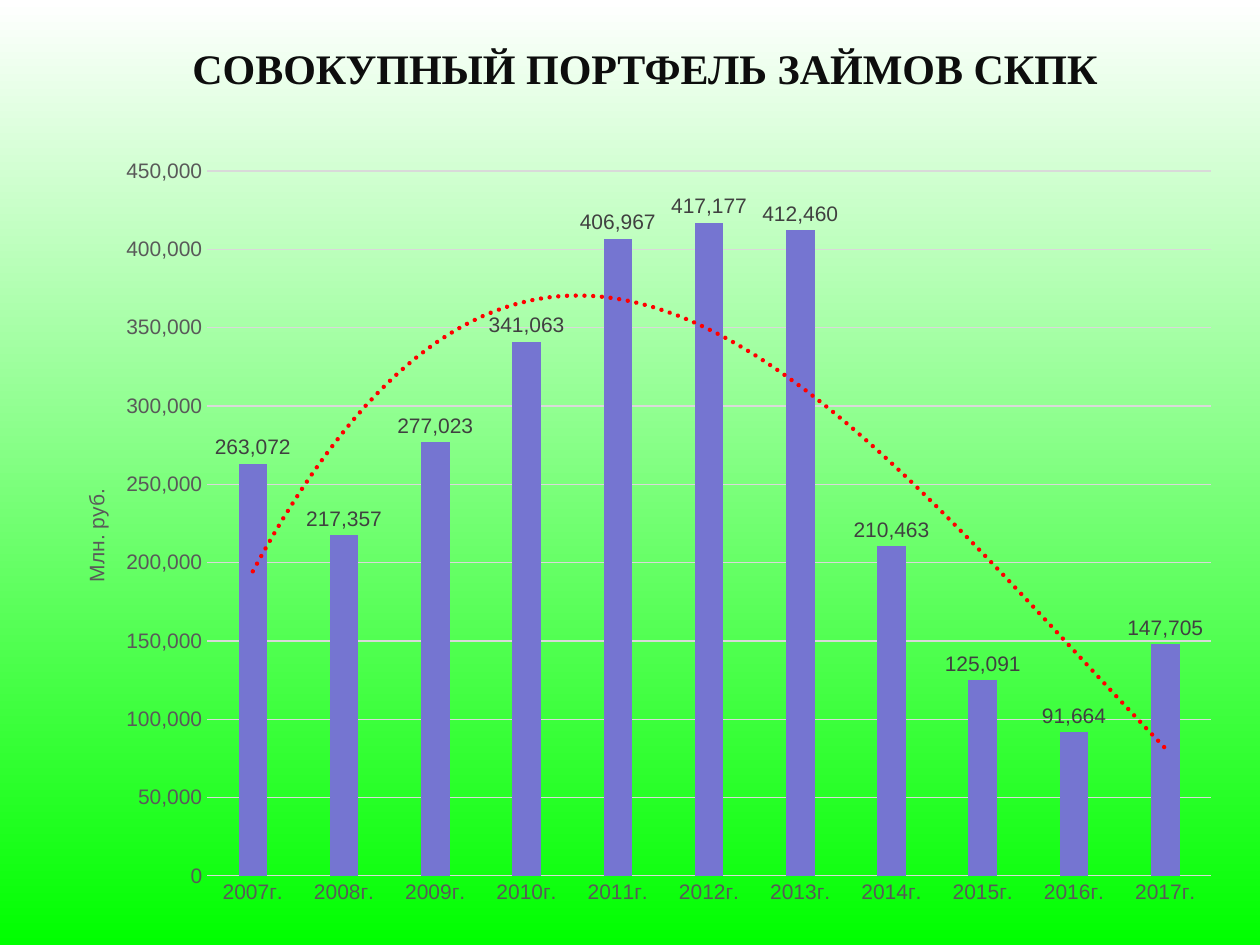
from lxml import etree
from pptx import Presentation
from pptx.chart.data import CategoryChartData
from pptx.dml.color import RGBColor
from pptx.enum import chart as kinds, text
from pptx.oxml import parse_xml
from pptx.oxml.ns import nsdecls, qn
from pptx.util import Inches, Pt

WHITE = RGBColor(0xFF, 0xFF, 0xFF)
GREEN = RGBColor(0x00, 0xFF, 0x00)
TITLE_INK = RGBColor(0x0D, 0x0D, 0x0D)
AXIS_INK = RGBColor(0x59, 0x59, 0x59)
LABEL_INK = RGBColor(0x40, 0x40, 0x40)
GRID = RGBColor(0xD9, 0xD9, 0xD9)
BAR = RGBColor(0x75, 0x75, 0xD1)
TREND = RGBColor(0xFF, 0x00, 0x00)

FIRST_YEAR = 2007
LOANS = [263072, 217357, 277023, 341063, 406967, 417177,
         412460, 210463, 125091, 91664, 147705]
NUMBER_FORMAT = "#,##0"


def paint_background(page):
    fill = page.background.fill
    fill.gradient()
    fill.gradient_angle = 270  # white at the top, green at the bottom
    for stop, color in zip(fill.gradient_stops, (WHITE, GREEN)):
        stop.color.rgb = color


def add_title(page, left, top, width, height):
    box = page.shapes.title
    box.left, box.top, box.width, box.height = left, top, width, height
    frame = box.text_frame
    frame.word_wrap = True
    frame.auto_size = text.MSO_AUTO_SIZE.NONE
    frame.vertical_anchor = text.MSO_ANCHOR.MIDDLE
    frame.margin_bottom = Inches(0.41)  # lifts the line above the middle
    para = frame.paragraphs[0]
    para.text = "СОВОКУПНЫЙ ПОРТФЕЛЬ ЗАЙМОВ СКПК"
    para.alignment = text.PP_ALIGN.CENTER
    style_font(para.font, 24, TITLE_INK, "Times New Roman")
    para.font.bold = True


def style_font(font, size, color, name="Arial"):
    font.size, font.name = Pt(size), name
    font.color.rgb = color


def style_line(line, color):
    line.color.rgb = color
    line.width = Pt(0.75)


def set_layout(parent, index, inner=False, **fractions):
    """Place a chart part by fractions of the chart's size."""
    for old in parent.findall(qn("c:layout")):
        parent.remove(old)
    layout = parse_xml(f"<c:layout {nsdecls('c')}><c:manualLayout/></c:layout>")
    settings = {"layoutTarget": "inner"} if inner else {}
    settings |= {"xMode": "edge", "yMode": "edge"} | fractions
    for tag, value in settings.items():
        etree.SubElement(layout[0], qn(f"c:{tag}")).set("val", str(value))
    parent.insert(index, layout)


def add_trend(series):
    trend = parse_xml(
        f'<c:trendline {nsdecls("c", "a")}><c:spPr>'
        f'<a:ln w="{Pt(2.5)}" cap="rnd"><a:solidFill><a:srgbClr val="{TREND}"/>'
        '</a:solidFill><a:prstDash val="sysDot"/></a:ln></c:spPr>'
        '<c:trendlineType val="poly"/><c:order val="3"/>'
        '<c:dispRSqr val="0"/><c:dispEq val="0"/></c:trendline>')
    series._element.find(qn("c:cat")).addprevious(trend)


def style_axes(chart):
    years, amounts = chart.category_axis, chart.value_axis
    for axis in (years, amounts):
        axis.major_tick_mark = axis.minor_tick_mark = kinds.XL_TICK_MARK.NONE
        style_font(axis.tick_labels.font, 12, AXIS_INK)
    style_line(years.format.line, GRID)
    amounts.format.line.fill.background()
    style_line(amounts.major_gridlines.format.line, GRID)
    amounts.minimum_scale, amounts.maximum_scale = 0, 450000
    amounts.major_unit = 50000
    amounts.tick_labels.number_format = NUMBER_FORMAT
    amounts.tick_labels.number_format_is_linked = False

    # Upright unit caption
    caption = amounts.axis_title
    para = caption.text_frame.paragraphs[0]
    para.text = "Млн. руб."
    style_font(para.font, 12, AXIS_INK)
    para.font.bold = False
    body = caption.text_frame._txBody.find(qn("a:bodyPr"))
    body.set("rot", "-5400000")
    body.set("vert", "horz")
    set_layout(caption._element, 1, x=0.03, y=0.44)


def add_loan_chart(page, left, top, width, height):
    data = CategoryChartData(number_format=NUMBER_FORMAT)
    data.categories = [f"{FIRST_YEAR + step}г." for step in range(len(LOANS))]
    data.add_series("Series 1", LOANS)
    chart = page.shapes.add_chart(
        kinds.XL_CHART_TYPE.COLUMN_CLUSTERED, left, top, width, height, data).chart
    chart.has_legend = chart.has_title = False
    chart.font.size, chart.font.name = Pt(10), "Arial"
    style_axes(chart)

    # Columns
    plot = chart.plots[0]
    plot.gap_width, plot.overlap = 219, -27
    plot.vary_by_categories = False
    series = plot.series[0]
    series.format.fill.solid()
    series.format.fill.fore_color.rgb = BAR

    # Values above the columns
    labels = series.data_labels
    labels.show_value = True
    labels.position = kinds.XL_LABEL_POSITION.OUTSIDE_END
    labels.number_format, labels.number_format_is_linked = NUMBER_FORMAT, False
    style_font(labels.font, 12, LABEL_INK)

    add_trend(series)
    plot_area = chart._chartSpace.find(".//" + qn("c:plotArea"))
    set_layout(plot_area, 0, inner=True, x=0.137, y=0.034, w=0.843, h=0.911)


def main():
    deck = Presentation()
    deck.slide_width, deck.slide_height = Inches(10), Inches(7.5)
    page = deck.slides.add_slide(deck.slide_layouts[5])  # title only
    paint_background(page)
    add_title(page, Inches(0.12), Inches(0.13), Inches(10), Inches(1.18))
    add_loan_chart(page, Inches(0.35), Inches(1.15), Inches(9.45), Inches(6.14))
    deck.save("out.pptx")


if __name__ == "__main__":
    main()
